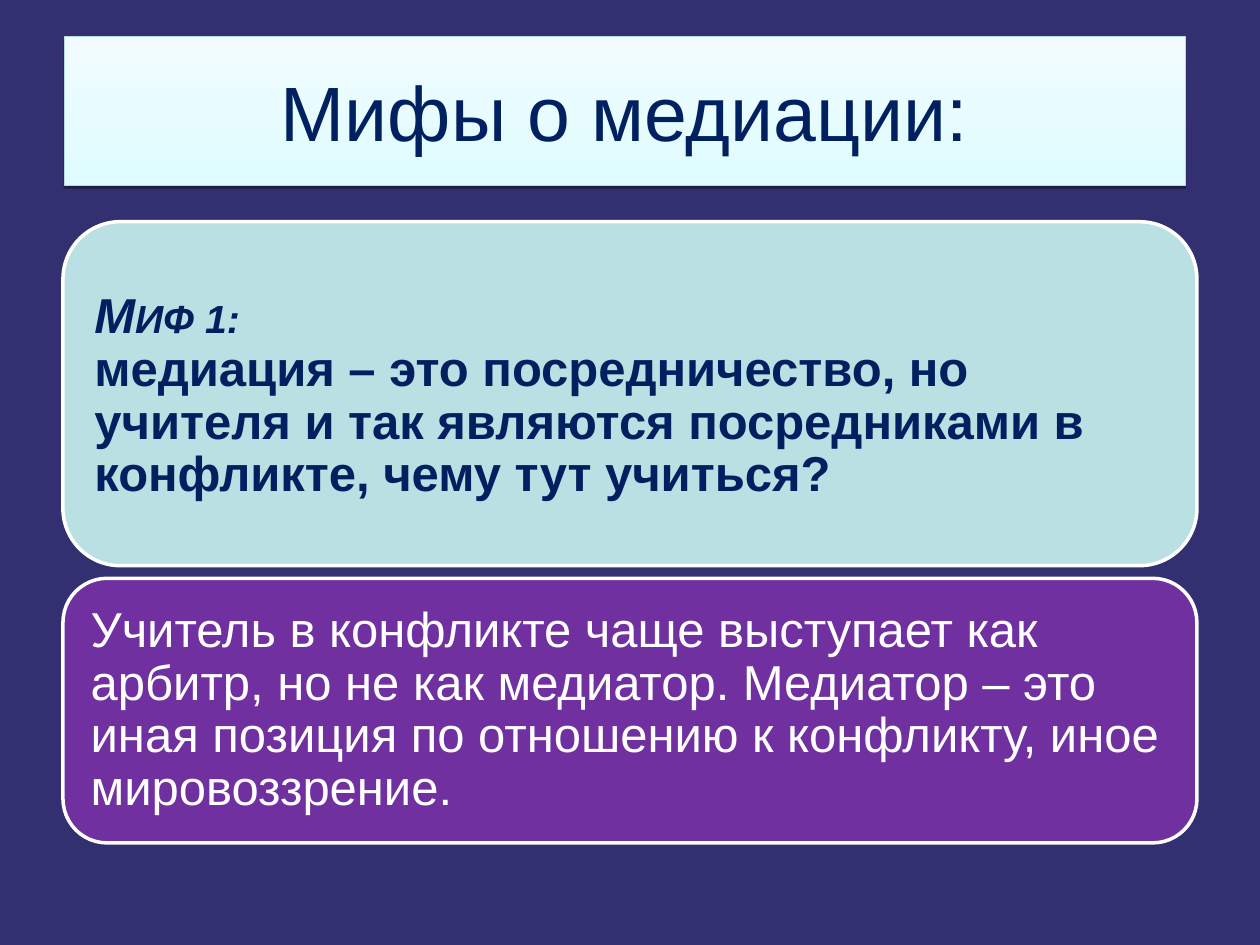
from lxml.etree import SubElement as Sub
from pptx import Presentation
from pptx.dml.color import RGBColor as Rgb
from pptx.enum.shapes import MSO_SHAPE as Kind
from pptx.enum.text import MSO_ANCHOR as Anchor, PP_ALIGN as Align
from pptx.oxml.ns import qn
from pptx.util import Inches, Pt

NAVY = "002060"
WHITE = "FFFFFF"


def tint(code):
    return Rgb.from_string(code)


class Deck:
    """Holds the text style and the current slide, and draws each kind of element."""

    font = "Arial"
    size = 28

    def __init__(self, back):
        self.prs = Presentation()
        self.prs.slide_width, self.prs.slide_height = Inches(10), Inches(7.5)
        self.slide = self.prs.slides.add_slide(self.prs.slide_layouts[6])
        fill = self.slide.background.fill
        fill.solid()
        fill.fore_color.rgb = tint(back)

    def shape(self, kind, box, edge, width):
        item = self.slide.shapes.add_shape(kind, *map(Inches, box))
        item.shadow.inherit = False
        item.line.color.rgb = tint(edge)
        item.line.width = Pt(width)
        return item

    def shade(self, item):
        effects = item._element.spPr.find(qn("a:effectLst"))
        cast = Sub(effects, qn("a:outerShdw"), blurRad="0", dist=str(Pt(1.6)),
                   dir="5400000", rotWithShape="0")
        color = Sub(cast, qn("a:srgbClr"), val="000000")
        Sub(color, qn("a:alpha"), val="38000")

    def words(self, para, text, color, size=None, bold=False, caps=False):
        run = para.add_run()
        run.text = text
        font = run.font
        font.name, font.size = self.font, Pt(size or self.size)
        font.bold, font.italic = bold, caps
        font.color.rgb = tint(color)
        if caps:
            run._r.get_or_add_rPr().set("cap", "small")

    def title(self, box, text):
        item = self.shape(Kind.RECTANGLE, box, "B5DCDE", 0.75)
        item.fill.gradient()
        item.fill.gradient_angle = 90
        for stop, color, place in zip(item.fill.gradient_stops, ("DEFCFF", "F2FCFF"), (0, 1)):
            stop.color.rgb = tint(color)
            stop.position = place
        self.shade(item)
        item.text_frame.vertical_anchor = Anchor.MIDDLE
        para = item.text_frame.paragraphs[0]
        para.alignment = Align.CENTER
        self.words(para, text, NAVY, 44)

    def card(self, box, pad, fill, color, text, head=None):
        item = self.shape(Kind.ROUNDED_RECTANGLE, box, WHITE, 2)
        item.fill.solid()
        item.fill.fore_color.rgb = tint(fill)
        left, top, width, height = box
        inner = left + pad, top + pad, width - 2 * pad, height - 2 * pad
        frame = self.slide.shapes.add_textbox(*map(Inches, inner)).text_frame
        frame.word_wrap = True
        frame.vertical_anchor = Anchor.MIDDLE
        frame.margin_left = frame.margin_right = Inches(0.12)
        frame.margin_top = frame.margin_bottom = Inches(0.12)
        para = frame.paragraphs[0]
        if head:
            self.words(para, head, color, bold=True, caps=True)
            para = frame.add_paragraph()
        para.line_spacing = 0.9
        self.words(para, text, color, bold=bool(head))

    def save(self):
        self.prs.save("out.pptx")


def main():
    deck = Deck("323070")
    deck.title((0.51, 0.29, 8.9, 1.18), "Мифы о медиации:")
    deck.card((0.5, 1.76, 9, 2.73), 0.13, "BBE0E3", NAVY,
              "медиация – это посредничество, но учителя и так являются "
              "посредниками в конфликте, чему тут учиться?", "Миф 1:")
    deck.card((0.5, 4.59, 9, 2.1), 0.1, "7030A0", WHITE,
              "Учитель в конфликте чаще выступает как арбитр, но не как медиатор. "
              "Медиатор – это иная позиция по отношению к конфликту, иное мировоззрение.")
    deck.save()


if __name__ == "__main__":
    main()
